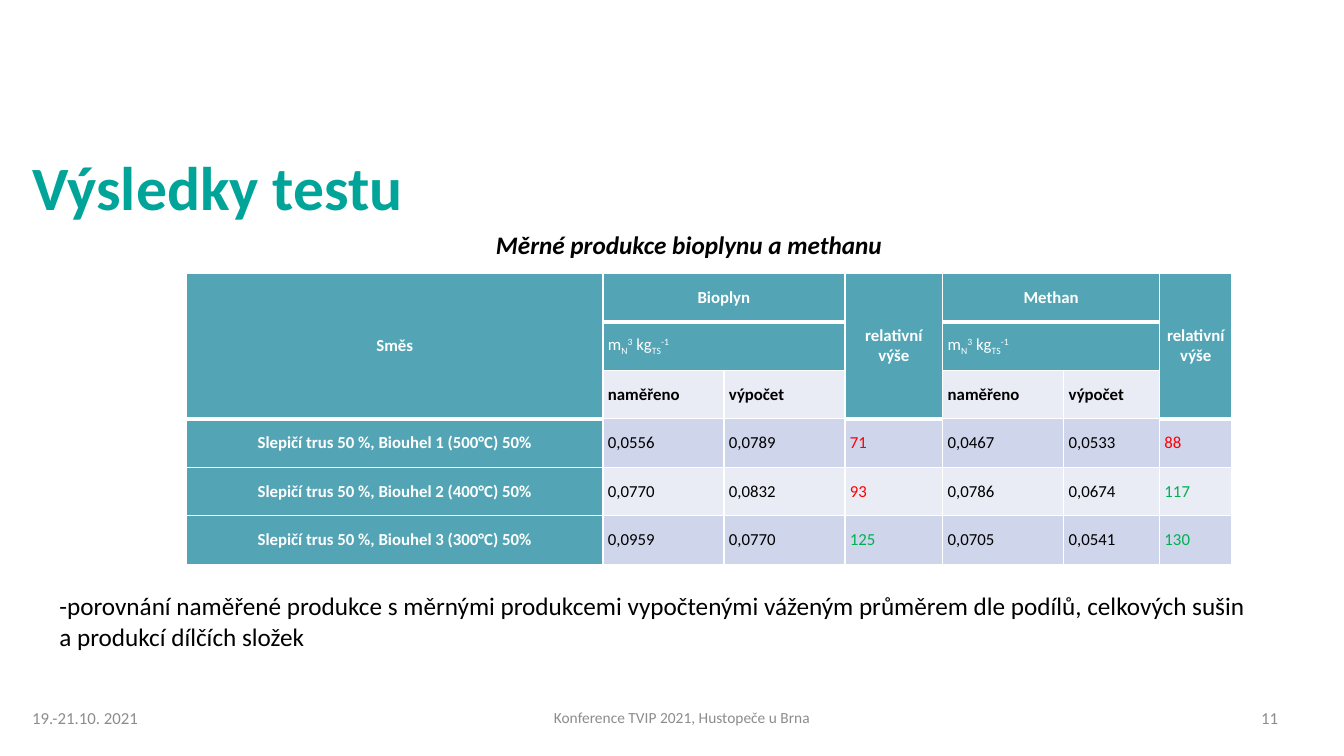
"""Build the slide with measured biogas and methane yields."""
from lxml import etree
from pptx import Presentation
from pptx.dml.color import RGBColor
from pptx.enum.text import MSO_ANCHOR, PP_ALIGN
from pptx.oxml.ns import qn
from pptx.util import Inches, Pt

TOP, MIDDLE, BOTTOM = MSO_ANCHOR.TOP, MSO_ANCHOR.MIDDLE, MSO_ANCHOR.BOTTOM
LEFT, CENTER, JUSTIFY = PP_ALIGN.LEFT, PP_ALIGN.CENTER, PP_ALIGN.JUSTIFY
FONT = "Calibri"
WHITE, BLACK, GREY = "FFFFFF", "000000", "8C8C8C"
GREEN_TITLE, TEAL, PALE, LILAC = "00A499", "53A5B5", "E9EBF5", "CFD5EA"
RED, GREEN = "FF0000", "00B050"

TEXTS = [
    ("Výsledky testu", (0.22, 1.15, 12.9, 1.12), BOTTOM, LEFT,
     {"size": 44, "color": GREEN_TITLE, "bold": True}),
    ("Konference TVIP 2021, Hustopeče u Brna", (1.35, 6.95, 10.83, 0.34), MIDDLE, CENTER,
     {"size": 11, "color": GREY}),
    ("11", (12.41, 6.95, 0.67, 0.34), MIDDLE, LEFT, {"size": 12, "color": GREY}),
    ("Měrné produkce bioplynu a methanu", (4.62, 2.23, 4.33, 0.4), MIDDLE, JUSTIFY,
     {"size": 18, "color": BLACK, "bold": True, "italic": True}),
    ("19.-21.10. 2021", (0.22, 6.95, 1.37, 0.34), MIDDLE, LEFT, {"size": 12, "color": GREY}),
    ("-porovnání naměřené produkce s měrnými produkcemi vypočtenými váženým průměrem "
     "dle podílů, celkových sušin a produkcí dílčích složek",
     (0.49, 5.81, 12.04, 0.71), TOP, LEFT, {"size": 18, "color": BLACK}),
]
CAPTION_INDENT = 0.2
TITLE_SPACING = 0.9

TABLE_PLACE = (1.85, 2.71, 10.37, 2.89)
COLUMN_WIDTHS = (4.13, 1.2, 1.2, 0.97, 1.2, 0.95, 0.72)
HEADINGS = [
    (0, 0, 3, 1, "Směs"),
    (0, 1, 1, 2, "Bioplyn"),
    (0, 3, 3, 1, "relativní\nvýše"),
    (0, 4, 1, 2, "Methan"),
    (0, 6, 3, 1, "relativní\nvýše"),
]
UNIT = [("m", 0), ("N", -25), ("3", 30), (" kg", 0), ("TS", -25), ("-1", 30)]
GAS_COLUMNS = (1, 4)
SUBHEADINGS = ("naměřeno", "výpočet")
RESULTS = [
    ("Slepičí trus 50 %, Biouhel 1 (500°C) 50%", "0,0556", "0,0789", "71", "0,0467", "0,0533", "88"),
    ("Slepičí trus 50 %, Biouhel 2 (400°C) 50%", "0,0770", "0,0832", "93", "0,0786", "0,0674", "117"),
    ("Slepičí trus 50 %, Biouhel 3 (300°C) 50%", "0,0959", "0,0770", "125", "0,0705", "0,0541", "130"),
]
RELATIVE_COLUMNS = (3, 6)
HEADING_ROWS = 3


def rgb(value):
    return RGBColor.from_string(value)


def add_span(para, text, style, baseline=0):
    span = para.add_run()
    span.text = text
    span.font.color.rgb = rgb(style["color"])
    formats = {"name": FONT, "size": Pt(style["size"]),
               "bold": style.get("bold", False), "italic": style.get("italic", False)}
    for name, value in formats.items():
        setattr(span.font, name, value)
    if baseline:
        span.font._element.set("baseline", str(baseline * 1000))


def add_text(page, text, place, anchor, align, style):
    box = page.shapes.add_textbox(*map(Inches, place))
    box.text_frame.word_wrap = True
    box.text_frame.vertical_anchor = anchor
    para = box.text_frame.paragraphs[0]
    para.alignment = align
    if anchor == BOTTOM:
        para.line_spacing = TITLE_SPACING
    if align == JUSTIFY:
        para._p.get_or_add_pPr().set("indent", str(Inches(CAPTION_INDENT)))
    add_span(para, text, style)


def paint_cell(cell, fill, bottom=1):
    properties = cell._tc.get_or_add_tcPr()
    for side, width in (("L", 1), ("R", 1), ("B", bottom)):
        line = etree.SubElement(properties, qn(f"a:ln{side}"), w=str(Pt(width)))
        solid = etree.SubElement(line, qn("a:solidFill"))
        etree.SubElement(solid, qn("a:srgbClr"), val=WHITE)
    cell.fill.solid()
    cell.fill.fore_color.rgb = rgb(fill)
    formats = {"vertical_anchor": MIDDLE, "margin_left": Inches(0.05),
               "margin_right": Inches(0.05), "margin_top": 0, "margin_bottom": 0}
    for name, value in formats.items():
        setattr(cell, name, value)


def write_cell(cell, lines, color, bold=False, align=LEFT):
    style = {"size": 12, "color": color, "bold": bold}
    for index, spans in enumerate(lines):
        frame = cell.text_frame
        para = frame.add_paragraph() if index else frame.paragraphs[0]
        para.alignment = align
        for text, baseline in spans:
            add_span(para, text, style, baseline)


def merge_area(grid, row, column, height, width, bottom):
    for down in range(height):
        for across in range(width):
            paint_cell(grid.cell(row + down, column + across), TEAL, bottom)
    origin = grid.cell(row, column)
    origin.merge(grid.cell(row + height - 1, column + width - 1))
    return origin


def add_headings(grid):
    for row, column, height, width, text in HEADINGS:
        origin = merge_area(grid, row, column, height, width, 3)
        lines = [[(line, 0)] for line in text.split("\n")]
        write_cell(origin, lines, WHITE, True, CENTER)
    for column in GAS_COLUMNS:
        write_cell(merge_area(grid, 1, column, 1, 2, 1), [UNIT], WHITE)
        for offset, text in enumerate(SUBHEADINGS):
            cell = grid.cell(2, column + offset)
            paint_cell(cell, PALE)
            write_cell(cell, [[(text, 0)]], BLACK, True)


def add_results(grid):
    for index, values in enumerate(RESULTS):
        for column, text in enumerate(values):
            cell = grid.cell(HEADING_ROWS + index, column)
            if column == 0:
                paint_cell(cell, TEAL)
                write_cell(cell, [[(text, 0)]], WHITE, True, CENTER)
                continue
            color = BLACK
            if column in RELATIVE_COLUMNS:
                color = RED if int(text) < 100 else GREEN
            paint_cell(cell, PALE if index % 2 else LILAC)
            write_cell(cell, [[(text, 0)]], color)


def add_yield_table(page):
    row_count = HEADING_ROWS + len(RESULTS)
    frame = page.shapes.add_table(row_count, len(COLUMN_WIDTHS), *map(Inches, TABLE_PLACE))
    grid = frame.table
    grid.first_row = False
    grid.horz_banding = False
    for column, width in zip(grid.columns, COLUMN_WIDTHS):
        column.width = Inches(width)
    for row in grid.rows:
        row.height = Inches(TABLE_PLACE[3] / row_count)
    add_headings(grid)
    add_results(grid)


def main():
    deck = Presentation()
    deck.slide_width, deck.slide_height = Inches(13.33), Inches(7.5)
    page = deck.slides.add_slide(deck.slide_layouts[6])
    for item in TEXTS:
        add_text(page, *item)
    add_yield_table(page)
    deck.save("out.pptx")


if __name__ == "__main__":
    main()
